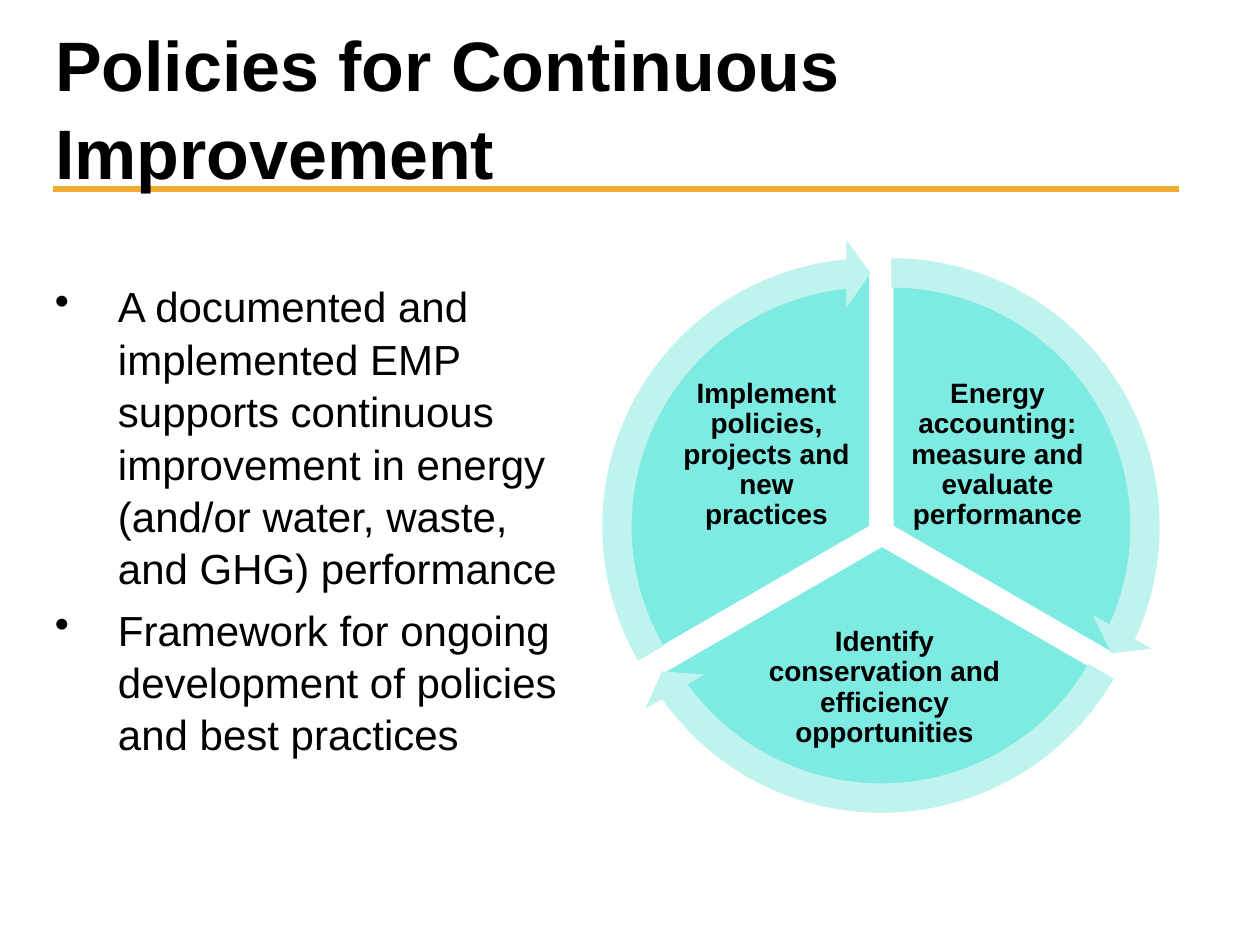
from lxml import etree
from pptx import Presentation
from pptx.dml.color import RGBColor
from pptx.enum.shapes import MSO_CONNECTOR, MSO_SHAPE
from pptx.enum.text import MSO_ANCHOR, PP_ALIGN
from pptx.oxml.ns import qn
from pptx.util import Pt

PX = 914400 / 126
BLACK = RGBColor(0x00, 0x00, 0x00)
WHITE = RGBColor(0xFF, 0xFF, 0xFF)
GOLD = RGBColor(0xEF, 0xAB, 0x31)
TEAL = RGBColor(0x7D, 0xEB, 0xE1)
PALE = RGBColor(0xBF, 0xF3, 0xEE)
LEFT, CENTER = PP_ALIGN.LEFT, PP_ALIGN.CENTER
TOP, MIDDLE = MSO_ANCHOR.TOP, MSO_ANCHOR.MIDDLE
PIE, ARROW = MSO_SHAPE.PIE, MSO_SHAPE.CIRCULAR_ARROW
STRAIGHT = MSO_CONNECTOR.STRAIGHT


def px(*vals):
    return [round(v * PX) for v in vals]


def add_text(text, box, size, bold=False, align=LEFT, anchor=TOP,
             inset=(13, 6), space=1.04, bullet=False):
    """Add a text box with one paragraph per line of text."""
    frame = slide.shapes.add_textbox(*px(*box)).text_frame
    frame.word_wrap = True
    frame.vertical_anchor = anchor
    side, edge = px(*inset)
    frame.margin_left = frame.margin_right = side
    frame.margin_top = frame.margin_bottom = edge
    for i, line in enumerate(text.split("\n")):
        para = frame.add_paragraph() if i else frame.paragraphs[0]
        para.alignment = align
        para.line_spacing = space
        if i:
            para.space_before = Pt(5)
        if bullet:
            props = para._p.get_or_add_pPr()
            props.set("marL", str(px(63)[0]))
            props.set("indent", str(px(-63)[0]))
            etree.SubElement(props, qn("a:buChar")).set("char", "•")
        run = para.add_run()
        run.text = line
        run.font.name = "Arial"
        run.font.size = Pt(size)
        run.font.bold = bold
        run.font.color.rgb = BLACK


prs = Presentation()
prs.slide_width, prs.slide_height = px(1260, 945)
slide = prs.slides.add_slide(prs.slide_layouts[6])

# Title and rule
rule = slide.shapes.add_connector(STRAIGHT, *px(53, 189, 1179, 189))
rule.line.color.rgb = GOLD
rule.line.width = Pt(4)
etree.SubElement(rule._element.spPr, qn("a:effectLst"))
add_text("Policies for Continuous Improvement", (42, 38, 914, 136), 40,
         bold=True, anchor=MIDDLE)

# Bullets
add_text("A documented and implemented EMP supports continuous improvement "
         "in energy (and/or water, waste, and GHG) performance\n"
         "Framework for ongoing development of policies and best practices",
         (42, 273, 557, 588), 24, bullet=True)

# Cycle: angles are in units of 100000/60000 of a degree, 216 to a turn
TURN, STEP, HEAD = 216, 72, 3.275
DISC, RING, GAP = 512, 575, 32
steps = [
    (636, 271, 162, "Energy accounting: measure and evaluate performance",
     (906, 379, 183, 152)),
    (626, 289, 18, "Identify conservation and efficiency opportunities",
     (748, 621, 273, 134)),
    (615, 271, 90, "Implement policies, projects and new practices",
     (675, 379, 183, 152)),
]
for x, y, start, label, box in steps:
    end = (start + STEP) % TURN
    pie = slide.shapes.add_shape(PIE, *px(x, y, DISC, DISC))
    pie.adjustments[0], pie.adjustments[1] = start, end
    pie.shadow.inherit = False
    pie.fill.solid()
    pie.fill.fore_color.rgb = TEAL
    pie.line.color.rgb = WHITE
    pie.line.width = Pt(2)
    add_text(label, box, 16, bold=True, align=CENTER, anchor=MIDDLE,
             inset=(3, 3), space=0.9)

for x, y, start, *_ in steps:
    end = (start + STEP) % TURN
    arrow = slide.shapes.add_shape(ARROW, *px(x - GAP, y - GAP, RING, RING))
    for i, val in enumerate((0.051, HEAD, end - HEAD, start, 0.059)):
        arrow.adjustments[i] = val
    arrow.shadow.inherit = False
    arrow.fill.solid()
    arrow.fill.fore_color.rgb = PALE
    arrow.line.fill.background()

prs.save("out.pptx")
